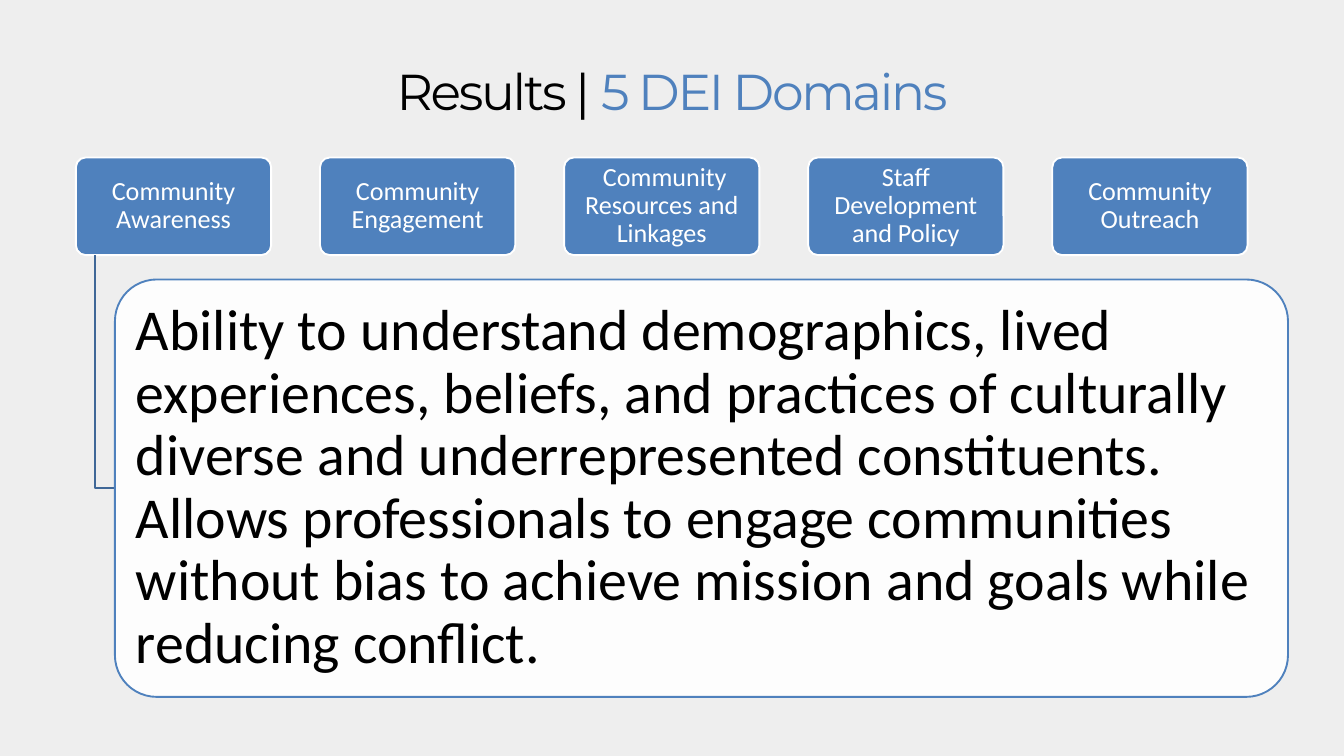
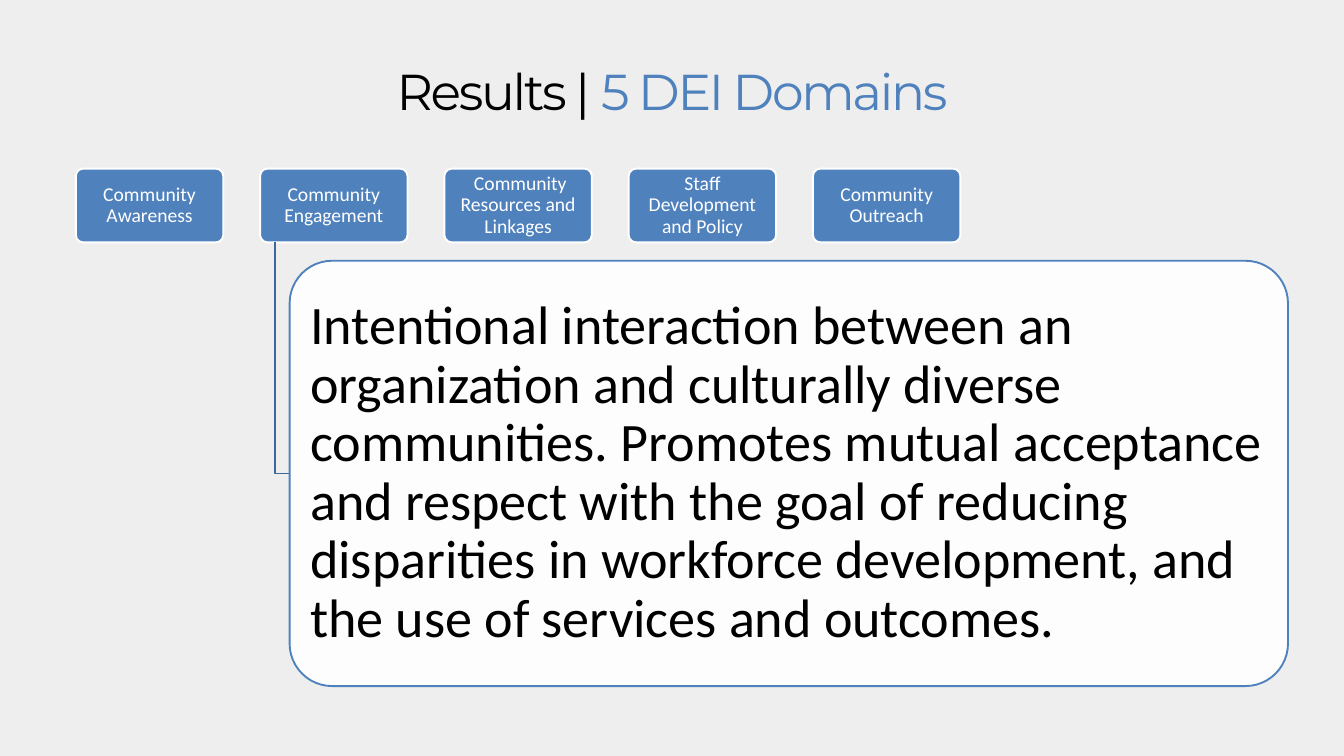
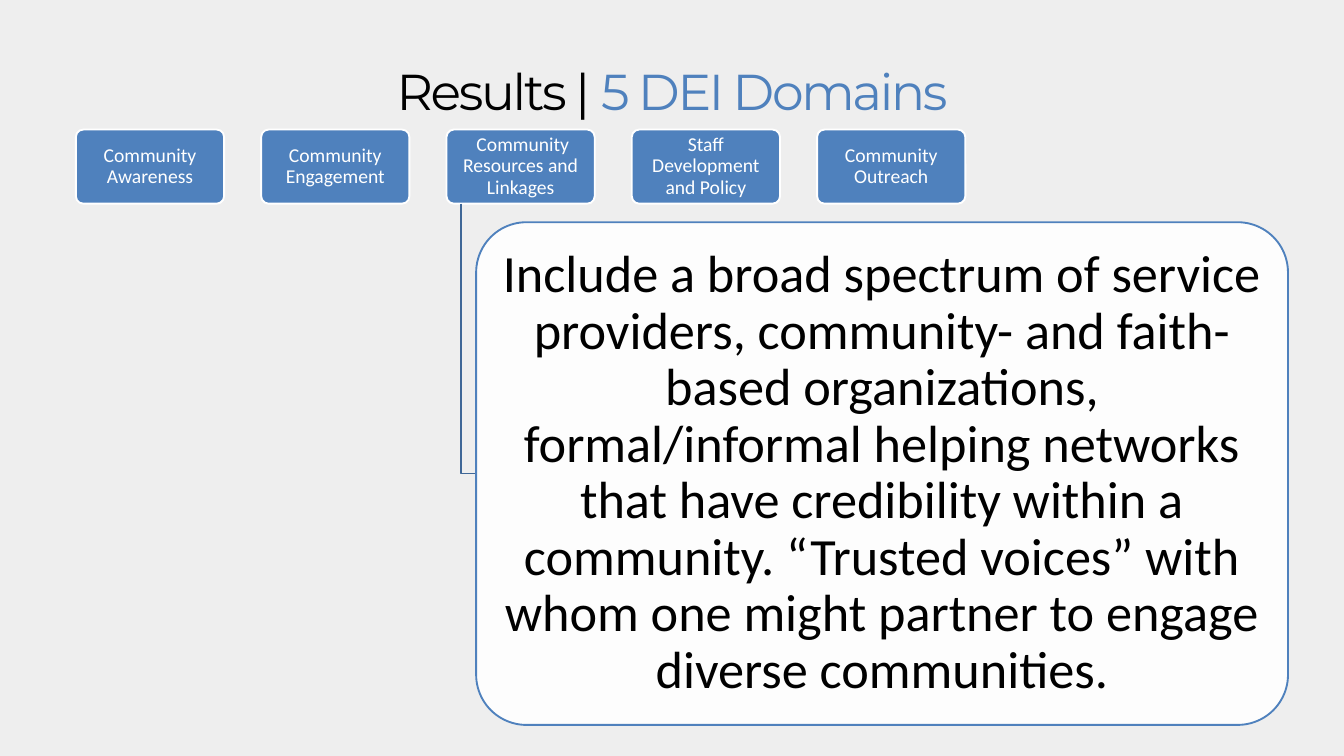
"""Builds three slides that each explain one of the five DEI domains."""
from dataclasses import dataclass

from lxml.etree import SubElement
from pptx import Presentation
from pptx.dml.color import RGBColor as RGB
from pptx.enum.shapes import MSO_SHAPE as Shape
from pptx.enum.text import MSO_ANCHOR as Anchor, MSO_AUTO_SIZE as AutoSize, PP_ALIGN as Align
from pptx.oxml.ns import qn
from pptx.util import Pt


@dataclass(frozen=True)
class Theme:
    paper: RGB = RGB.from_string("EEEEEE")
    white: RGB = RGB.from_string("FFFFFF")
    ink: RGB = RGB.from_string("000000")
    accent: RGB = RGB.from_string("4F81BD")
    elbow: RGB = RGB.from_string("3F6797")
    title_font: str = "Montserrat"
    body_font: str = "Calibri"
    title_size: int = 54
    title_leading: int = 96
    title_spacing: int = -250
    line_width: int = 2
    left: float = 81.3
    right: float = 1380


DOMAINS = [
    "Community Awareness",
    "Community Engagement",
    " Community Resources and Linkages",
    "Staff Development and Policy",
    "Community Outreach",
]

SLIDES = [
    dict(active=0, top=168.7, chip_w=209.23, chip_size=28, panel_h=447.2, size=62, align=Align.LEFT,
         text="Ability to understand demographics, lived experiences, beliefs, and practices of "
              "culturally diverse and underrepresented constituents. Allows professionals to engage "
              "communities without bias to achieve mission and goals while reducing conflict."),
    dict(active=1, top=180.7, chip_w=157.95, chip_size=21, panel_h=455.7, size=58, align=Align.LEFT,
         text="Intentional interaction between an organization and culturally diverse communities. "
              "Promotes mutual acceptance and respect with the goal of reducing disparities in "
              "workforce development, and the use of services and outcomes."),
    dict(active=2, top=138.8, chip_w=158.83, chip_size=21, panel_h=538.6, size=56, align=Align.CENTER,
         text="Include a broad spectrum of service providers, community- and faith-based "
              "organizations, formal/informal helping networks that have credibility within a "
              "community. “Trusted voices” with whom one might partner to engage diverse communities."),
]


def apply(target, **values):
    for name, value in values.items():
        setattr(target, name, value)


class Deck:
    def __init__(self, theme):
        self.theme = theme
        self.prs = Presentation()
        apply(self.prs, slide_width=Pt(1440), slide_height=Pt(810))
        fill = self.prs.slide_master.background.fill
        fill.solid()
        fill.fore_color.rgb = theme.paper
        self.s = None

    def new_slide(self):
        self.s = self.prs.slides.add_slide(self.prs.slide_layouts[5])

    def frame(self, tf, anchor, x=0, y=0):
        apply(tf, word_wrap=True, auto_size=AutoSize.NONE, vertical_anchor=anchor,
              margin_left=Pt(x), margin_right=Pt(x), margin_top=Pt(y), margin_bottom=Pt(y))

    def run(self, p, text, font, size, color):
        r = p.add_run()
        r.text = text
        apply(r.font, name=font, size=Pt(size))
        r.font.color.rgb = color
        return r

    def outline(self, sp, color):
        sp.shadow.inherit = False
        sp.line.width = Pt(self.theme.line_width)
        sp.line.color.rgb = color

    def title(self, *parts):
        t = self.theme
        sp = self.s.shapes.title
        apply(sp, left=Pt(81), top=Pt(33), width=Pt(1278), height=Pt(85.7))
        self.frame(sp.text_frame, Anchor.TOP)
        p = sp.text_frame.paragraphs[0]
        apply(p, alignment=Align.CENTER, line_spacing=Pt(t.title_leading))
        for text, color in parts:
            r = self.run(p, text, t.title_font, t.title_size, color)
            r.font._element.set("spc", str(t.title_spacing))

    def card(self, box, text, size, align, fill, line, color, alpha=None):
        sp = self.s.shapes.add_shape(Shape.ROUNDED_RECTANGLE, *map(Pt, box))
        sp.adjustments[0] = 0.1
        sp.fill.solid()
        sp.fill.fore_color.rgb = fill
        if alpha:
            clr = sp._element.spPr.find(qn("a:solidFill"))[0]
            SubElement(clr, qn("a:alpha"), val=str(alpha * 1000))
        self.outline(sp, line)
        self.frame(sp.text_frame, Anchor.MIDDLE, 0.15 * size, 0.1 * size)
        p = sp.text_frame.paragraphs[0]
        apply(p, alignment=align, line_spacing=0.9)
        self.run(p, text, self.theme.body_font, size, color)

    def elbow(self, x, y, end_x, end_y):
        path = self.s.shapes.build_freeform(Pt(x), Pt(y))
        path.add_line_segments([(Pt(x), Pt(end_y)), (Pt(end_x), Pt(end_y))], close=False)
        sp = path.convert_to_shape()
        sp.fill.background()
        self.outline(sp, self.theme.elbow)

    def domains(self, active, top, chip_w, chip_size, panel_h, size, align, text):
        t = self.theme
        chip_h, pitch = chip_w / 2, chip_w * 1.25
        for i, name in enumerate(DOMAINS):
            x = t.left + i * pitch
            self.card((x, top, chip_w, chip_h), name, chip_size, Align.CENTER, t.accent, t.white, t.white)
        x = t.left + active * pitch
        panel_x, panel_y = x + chip_w / 5, top + chip_h * 1.25
        self.elbow(x + chip_w / 10, top + chip_h, panel_x, panel_y + panel_h / 2)
        self.card((panel_x, panel_y, t.right - panel_x, panel_h), text, size, align,
                  t.white, t.accent, t.ink, alpha=90)


def main():
    theme = Theme()
    deck = Deck(theme)
    for content in SLIDES:
        deck.new_slide()
        deck.title(("Results | ", theme.ink), ("5 DEI Domains", theme.accent))
        deck.domains(**content)
    deck.prs.save("out.pptx")


if __name__ == "__main__":
    main()
